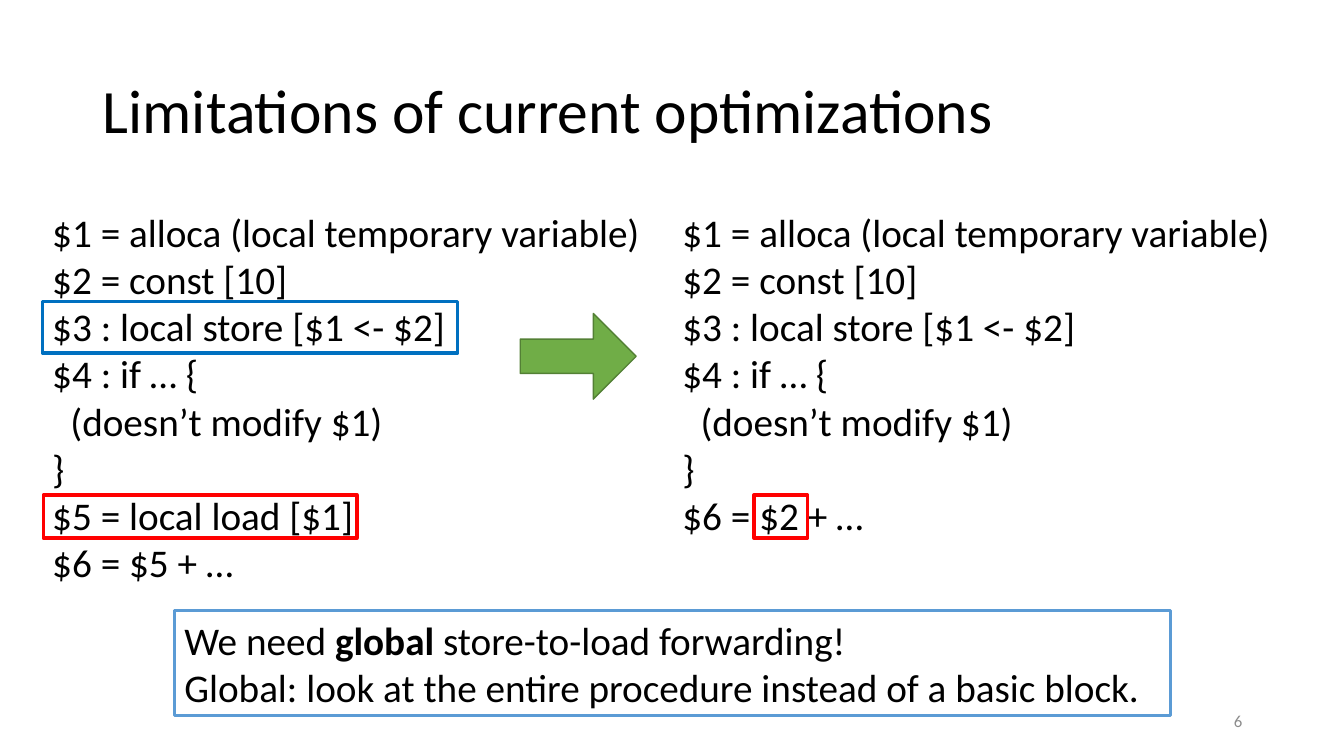
from pptx import Presentation
from pptx.dml.color import RGBColor
from pptx.enum.shapes import MSO_SHAPE
from pptx.enum.text import MSO_ANCHOR, PP_ALIGN
from pptx.util import Inches, Pt

RECTANGLE = MSO_SHAPE.RECTANGLE
RIGHT_ARROW = MSO_SHAPE.RIGHT_ARROW
MIDDLE = MSO_ANCHOR.MIDDLE
LEFT, RIGHT = PP_ALIGN.LEFT, PP_ALIGN.RIGHT

FONT = "Calibri"
COLORS = {
    "text": "000000",
    "number": "8C8C8C",
    "store": "0070C0",
    "load": "FF0000",
    "callout": "5B9BD5",
    "arrow": "70AD47",
    "arrow_edge": "538035",
}
CODE_TOP = 2.02
CODE_INSET = 0.05
LINE_PITCH = 0.47
BODY_INDENT = "(doesn’t"

SHARED_CODE = [
    "$1 = alloca (local temporary variable)",
    "$2 = const [10]",
    "$3 : local store [$1 <- $2]",
    "$4 : if … {",
    "(doesn’t modify $1)",
    "}",
]
CODE_BEFORE = SHARED_CODE + ["$5 = local load [$1]", "$6 = $5 + …"]
CODE_AFTER = SHARED_CODE + ["$6 = $2 + …"]


def color(name):
    """Return the named colour."""
    return RGBColor.from_string(COLORS[name])


def format_run(run, size, color_name="text", bold=False):
    """Apply font, size, weight and colour to a run."""
    run.font.name = FONT
    run.font.size = Pt(size)
    run.font.bold = bold
    run.font.color.rgb = color(color_name)


def add_outline(slide, box, line_name, line_width, preset=RECTANGLE):
    """Add an unfilled, shadowless shape in the given box."""
    outline = slide.shapes.add_shape(preset, *map(Inches, box))
    outline.shadow.inherit = False
    outline.fill.background()
    outline.line.color.rgb = color(line_name)
    outline.line.width = Pt(line_width)
    return outline


def add_title(slide, box, wording):
    """Place the slide title in its placeholder."""
    title = slide.shapes.title
    title.left, title.top, title.width, title.height = map(Inches, box)
    frame = title.text_frame
    frame.text = wording
    frame.vertical_anchor = MIDDLE
    heading = frame.paragraphs[0]
    heading.alignment = LEFT
    heading.line_spacing = 0.9
    format_run(heading.runs[0], 44)


def add_code(slide, box, lines):
    """Write a code listing, one paragraph per line."""
    listing = slide.shapes.add_textbox(*map(Inches, box)).text_frame
    listing.word_wrap = True
    listing.text = "\n".join(lines)
    for statement in listing.paragraphs:
        format_run(statement.runs[0], 28)
        if statement.text.startswith(BODY_INDENT):
            statement._p.get_or_add_pPr().set("marL", str(Inches(0.18)))


def add_highlight(slide, left, line_index, width, height, line_name):
    """Frame part of a code line, centred on that line."""
    center = CODE_TOP + CODE_INSET + LINE_PITCH * (line_index + 0.5)
    add_outline(slide, (left, center - height / 2, width, height), line_name, 2.5)


def add_callout(slide, box):
    """Add the framed conclusion."""
    frame = add_outline(slide, box, "callout", 2).text_frame
    frame.word_wrap = True
    frame.vertical_anchor = MIDDLE
    need, definition = frame.paragraphs[0], frame.add_paragraph()
    for wording in ("We need ", "global", " store-to-load forwarding!"):
        need.add_run().text = wording
    definition.text = "Global: look at the entire procedure instead of a basic block."
    for sentence in (need, definition):
        sentence.alignment = LEFT
        for run in sentence.runs:
            format_run(run, 28, bold=run.text == "global")


def add_arrow(slide, box):
    """Add the arrow from the code before to the code after."""
    arrow = add_outline(slide, box, "arrow_edge", 1, RIGHT_ARROW)
    arrow.adjustments[0] = 0.4
    arrow.fill.solid()
    arrow.fill.fore_color.rgb = color("arrow")


def add_slide_number(slide, box, number):
    """Write the slide number, right-aligned."""
    frame = slide.shapes.add_textbox(*map(Inches, box)).text_frame
    frame.word_wrap = True
    frame.vertical_anchor = MIDDLE
    frame.text = number
    frame.paragraphs[0].alignment = RIGHT
    format_run(frame.paragraphs[0].runs[0], 12, "number")


def main():
    """Build the slide and save it."""
    deck = Presentation()
    deck.slide_width, deck.slide_height = Inches(13.33), Inches(7.5)
    slide = deck.slides.add_slide(deck.slide_layouts[5])
    add_title(slide, (0.92, 0.4, 11.5, 1.45), "Limitations of current optimizations")
    add_code(slide, (0.42, CODE_TOP, 6.24, 3.87), CODE_BEFORE)
    add_callout(slide, (1.73, 6.06, 9.88, 1.04))
    add_code(slide, (6.67, CODE_TOP, 6.24, 3.4), CODE_AFTER)
    add_slide_number(slide, (9.42, 6.95, 3, 0.4), "6")
    add_highlight(slide, 0.42, 2, 4.12, 0.51, "store")
    add_highlight(slide, 0.43, 6, 3.11, 0.43, "load")
    add_highlight(slide, 7.48, 6, 0.53, 0.43, "load")
    add_arrow(slide, (5.16, 3.11, 1.15, 0.85))
    deck.save("out.pptx")


if __name__ == "__main__":
    main()
